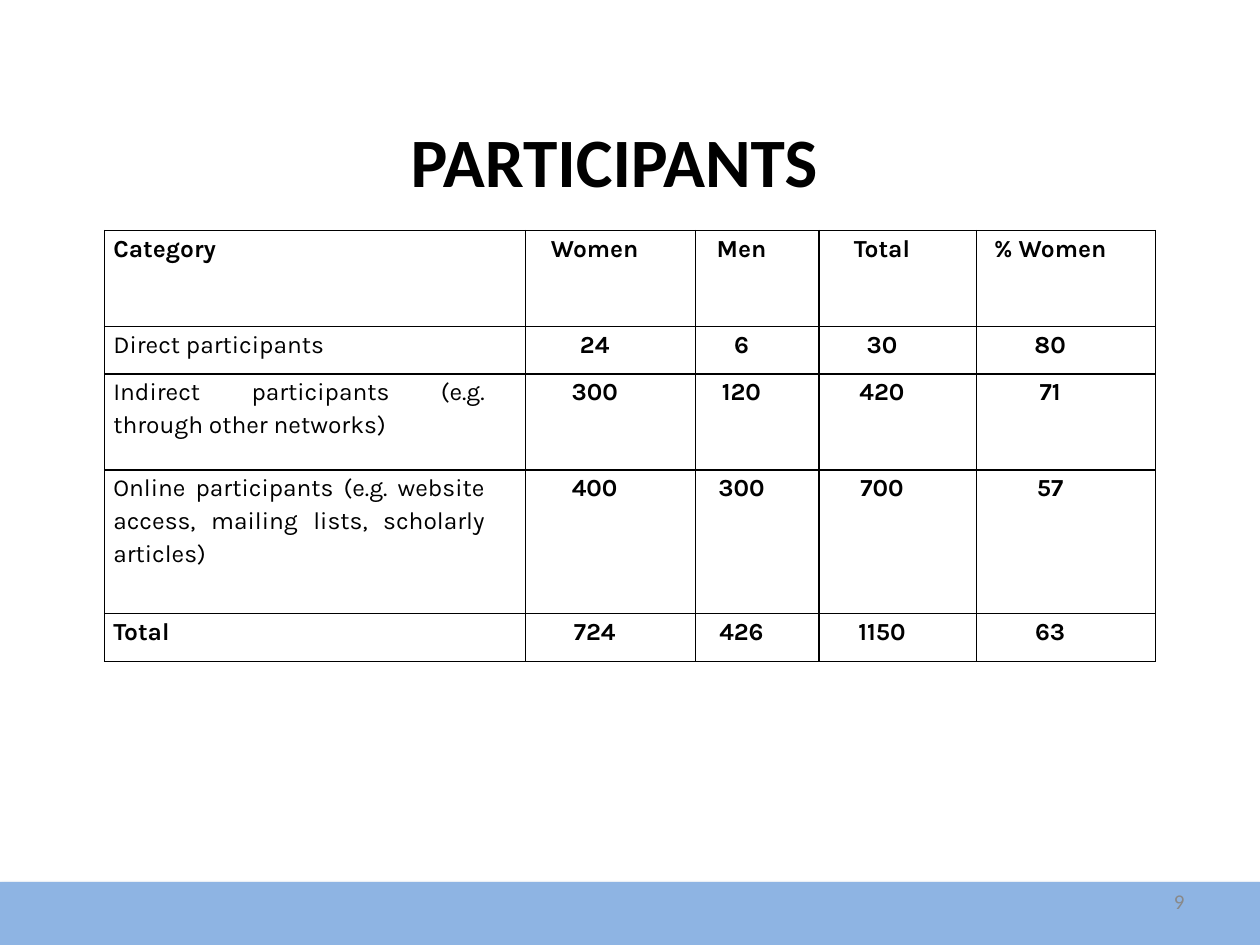
from lxml.etree import SubElement
from pptx import Presentation
from pptx.dml.color import RGBColor
from pptx.enum.shapes import MSO_SHAPE
from pptx.enum.text import MSO_ANCHOR as ANCHOR, PP_ALIGN as ALIGN
from pptx.oxml import parse_xml
from pptx.oxml.ns import nsdecls, qn
from pptx.util import Inches, Pt

COLUMN_WIDTHS = [3.34, 1.35, 0.98, 1.25, 1.42]
LINE_HEIGHT = 0.38
ROW_LINES = [2, 1, 2, 3, 1]
ROWS = [
    ["Category", "Women", "Men", "Total", "% Women"],
    ["Direct participants", "24", "6", "30", "80"],
    ["Indirect participants (e.g. through other networks)", "300", "120", "420", "71"],
    ["Online participants (e.g. website access, mailing lists, scholarly articles)",
     "400", "300", "700", "57"],
    ["Total", "724", "426", "1150", "63"],
]


def color(hex_code):
    return RGBColor.from_string(hex_code)


def place(part, left, top, width, height):
    part.left, part.top = Inches(left), Inches(top)
    part.width, part.height = Inches(width), Inches(height)


def write(frame, text, size, font="Calibri", hex_code="000000", bold=False,
          align=ALIGN.CENTER, anchor=ANCHOR.TOP, insets=(0.1, 0.05, 0.1, 0.05),
          line_spacing=None, right_indent=0):
    """Fill a text frame with one formatted paragraph; insets run left, top, right, bottom."""
    frame.word_wrap = True
    frame.vertical_anchor = anchor
    (frame.margin_left, frame.margin_top,
     frame.margin_right, frame.margin_bottom) = map(Inches, insets)
    paragraph = frame.paragraphs[0]
    paragraph.alignment = align
    if line_spacing:
        paragraph.line_spacing = line_spacing
    if right_indent:
        paragraph._p.get_or_add_pPr().set("marR", str(Inches(right_indent)))
    run = paragraph.add_run()
    run.text = text
    run.font.size, run.font.name, run.font.bold = Pt(size), font, bold
    run.font.color.rgb = color(hex_code)


def add_borders(cell, hex_code="000000", width=1):
    properties = cell._tc.get_or_add_tcPr()
    for position, side in enumerate(("a:lnL", "a:lnR", "a:lnT", "a:lnB")):
        line = parse_xml(f'<{side} {nsdecls("a")} w="{Pt(width)}"/>')
        fill = SubElement(line, qn("a:solidFill"))
        SubElement(fill, qn("a:srgbClr"), val=hex_code)
        properties.insert(position, line)


def add_title(slide, left, top, width, height):
    title = slide.shapes.title
    place(title, left, top, width, height)
    write(title.text_frame, "PARTICIPANTS", 39.6, bold=True,
          anchor=ANCHOR.BOTTOM, insets=(0.1, 0.05, 0.35, 0))


def add_participants_table(slide, left, top):
    table = slide.shapes.add_table(
        len(ROWS), len(COLUMN_WIDTHS), Inches(left), Inches(top),
        Inches(sum(COLUMN_WIDTHS)), Inches(LINE_HEIGHT * sum(ROW_LINES))).table
    table.first_row = table.horz_banding = False
    for column, width in zip(table.columns, COLUMN_WIDTHS):
        column.width = Inches(width)
    for row, lines in zip(table.rows, ROW_LINES):
        row.height = Inches(LINE_HEIGHT * lines)
    for r, texts in enumerate(ROWS):
        for c, text in enumerate(texts):
            cell = table.cell(r, c)
            cell.fill.background()
            add_borders(cell)
            cell.margin_left = cell.margin_right = Inches(0.07)
            cell.margin_top = cell.margin_bottom = 0
            write(cell.text_frame, text, 14, font="Karla",
                  bold=c > 0 or r in (0, len(ROWS) - 1),
                  align=ALIGN.CENTER if c else ALIGN.JUSTIFY,
                  insets=(0.07, 0, 0.07, 0), line_spacing=1.15, right_indent=0.25)


def add_footer(slide, left, top, width, height):
    band = slide.shapes.add_shape(MSO_SHAPE.RECTANGLE, 0, 0, 0, 0)
    place(band, left, top, width, height)
    band.fill.solid()
    band.fill.fore_color.rgb = color("8EB4E3")
    band.line.fill.background()
    band.shadow.inherit = False
    effects = band._element.spPr.find(qn("a:effectLst"))
    shadow = SubElement(effects, qn("a:outerShdw"), blurRad=str(Pt(3.1)),
                        dist=str(Pt(1.8)), dir="5400000", rotWithShape="0")
    black = SubElement(shadow, qn("a:srgbClr"), val="000000")
    SubElement(black, qn("a:alpha"), val="35000")

    page_number = slide.shapes.add_textbox(0, 0, 0, 0)
    place(page_number, left + width - 2.83, top - 0.05, 2.33, 0.4)
    write(page_number.text_frame, "9", 12, hex_code="898989",
          align=ALIGN.RIGHT, anchor=ANCHOR.MIDDLE)


def main():
    deck = Presentation()
    deck.slide_width, deck.slide_height = Inches(10), Inches(7.5)
    slide = deck.slides.add_slide(deck.slide_layouts[5])
    add_title(slide, 0.5, 0.35, 9, 1.25)
    add_participants_table(slide, 0.83, 1.83)
    add_footer(slide, 0, 7, 10, 0.53)
    deck.save("out.pptx")


if __name__ == "__main__":
    main()
